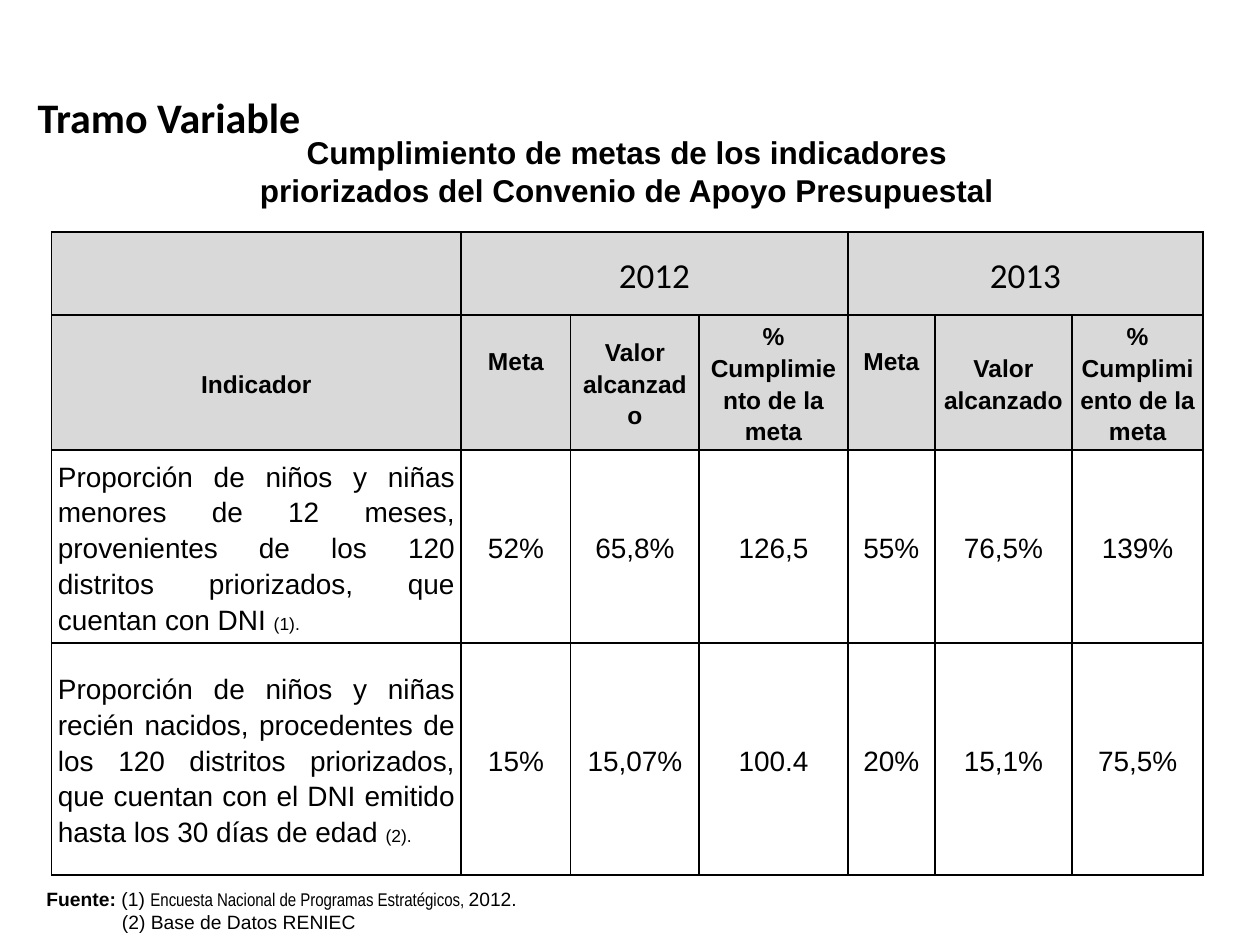
from lxml import etree
from pptx import Presentation
from pptx.dml.color import RGBColor
from pptx.enum.text import MSO_ANCHOR, MSO_AUTO_SIZE, PP_ALIGN
from pptx.oxml.ns import qn
from pptx.util import Inches, Pt

CENTER, JUSTIFY, LEFT = PP_ALIGN.CENTER, PP_ALIGN.JUSTIFY, PP_ALIGN.LEFT
MIDDLE, TOP = MSO_ANCHOR.MIDDLE, MSO_ANCHOR.TOP
GROW = MSO_AUTO_SIZE.SHAPE_TO_FIT_TEXT
COLORS = {"ink": "000000", "header": "D9D9D9", "body": "FFFFFF"}

deck = Presentation()
deck.slide_width, deck.slide_height = Inches(10), Inches(7.5)
slide = deck.slides.add_slide(deck.slide_layouts[6])


def add_text_frame(left, top, width, height, anchor=TOP):
    box = slide.shapes.add_textbox(Inches(left), Inches(top), Inches(width), Inches(height))
    frame = box.text_frame
    frame.word_wrap = True
    frame.auto_size = GROW
    frame.vertical_anchor = anchor
    return frame


def write(paragraph, pieces, size, font="Arial", bold=False, align=CENTER):
    """Each piece is (text, overrides of the paragraph font)."""
    paragraph.alignment = align
    paragraph.font.size, paragraph.font.name, paragraph.font.bold = Pt(size), font, bold
    paragraph.font.color.rgb = RGBColor.from_string(COLORS["ink"])
    for text, overrides in pieces:
        run = paragraph.add_run()
        run.text = text
        for attribute, value in overrides.items():
            setattr(run.font, attribute, value)


# Section heading
heading = add_text_frame(0.2, 0.68, 3.35, 0.51)
write(heading.paragraphs[0], [("Tramo Variable", {})], 24, "Calibri", True, LEFT)

# Indicator table: two years of three columns each
column_widths = [3.25, 0.87, 1.02, 1.18, 0.69, 1.09, 1.04]
row_heights = [0.66, 1.07, 1.53, 1.84]
year_columns = ["Meta", "Valor alcanzado", "% Cumplimiento de la meta"]
indicators = [
    ("Proporción de niños y niñas menores de 12 meses, provenientes de los 120 "
     "distritos priorizados, que cuentan con DNI ", "(1).",
     ["52%", "65,8%", "126,5", "55%", "76,5%", "139%"]),
    ("Proporción de niños y niñas recién nacidos, procedentes de los 120 distritos "
     "priorizados, que cuentan con el DNI emitido hasta los 30 días de edad ", "(2).",
     ["15%", "15,07%", "100.4", "20%", "15,1%", "75,5%"]),
]
table = slide.shapes.add_table(
    len(row_heights), len(column_widths), Inches(0.41), Inches(1.84),
    Inches(sum(column_widths)), Inches(sum(row_heights))).table
table.first_row = table.horz_banding = False
for column, width in zip(table.columns, column_widths):
    column.width = Inches(width)
for row, height in zip(table.rows, row_heights):
    row.height = Inches(height)

# Cell margins, borders and fills
for r, row in enumerate(table.rows):
    for cell in row.cells:
        cell.vertical_anchor = MIDDLE
        cell.margin_left = cell.margin_right = Inches(0.05)
        cell.margin_top = cell.margin_bottom = 0
        properties = cell._tc.get_or_add_tcPr()
        for side in ("a:lnL", "a:lnR", "a:lnT", "a:lnB"):
            border = etree.SubElement(properties, qn(side), w=str(Pt(1)))
            line_fill = etree.SubElement(border, qn("a:solidFill"))
            etree.SubElement(line_fill, qn("a:srgbClr"), val=COLORS["ink"])
        cell.fill.solid()
        cell.fill.fore_color.rgb = RGBColor.from_string(COLORS["header" if r < 2 else "body"])
        cell.text_frame.paragraphs[0].line_spacing = 1.15

# Header rows
for year, first in (("2012", 1), ("2013", 4)):
    table.cell(0, first).merge(table.cell(0, first + 2))
    write(table.cell(0, first).text_frame.paragraphs[0], [(year, {})], 20, "Calibri")
    table.cell(1, first).margin_bottom = Inches(0.36)  # "Meta" sits above the middle
for c, label in enumerate(["Indicador"] + year_columns * 2):
    write(table.cell(1, c).text_frame.paragraphs[0], [(label, {})], 14, bold=True)

# Indicator rows
for r, (indicator, note, values) in enumerate(indicators, start=2):
    write(table.cell(r, 0).text_frame.paragraphs[0],
          [(indicator, {}), (note, {"size": Pt(10)})], 16, align=JUSTIFY)
    for c, value in enumerate(values, start=1):
        write(table.cell(r, c).text_frame.paragraphs[0], [(value, {})], 16)

# Sources
sources = add_text_frame(0.27, 6.99, 4.8, 0.47, MIDDLE)
write(sources.paragraphs[0], [
    ("Fuente:", {"bold": True}),
    (" (1) ", {}),
    ("Encuesta Nacional de Programas Estratégicos, ", {"name": "Arial Narrow", "size": Pt(10.5)}),
    ("2012.", {}),
], 11, align=JUSTIFY)
second_source = sources.add_paragraph()
write(second_source, [("(2) Base de Datos RENIEC", {})], 11, align=JUSTIFY)
second_source._p.get_or_add_pPr().set("marL", str(Inches(0.6)))

# Table title
title = add_text_frame(1.63, 1.01, 6.69, 0.71)
write(title.paragraphs[0], [
    ("Cumplimiento de metas de los indicadores priorizados del Convenio de Apoyo Presupuestal", {}),
], 18, bold=True)

deck.save("out.pptx")
